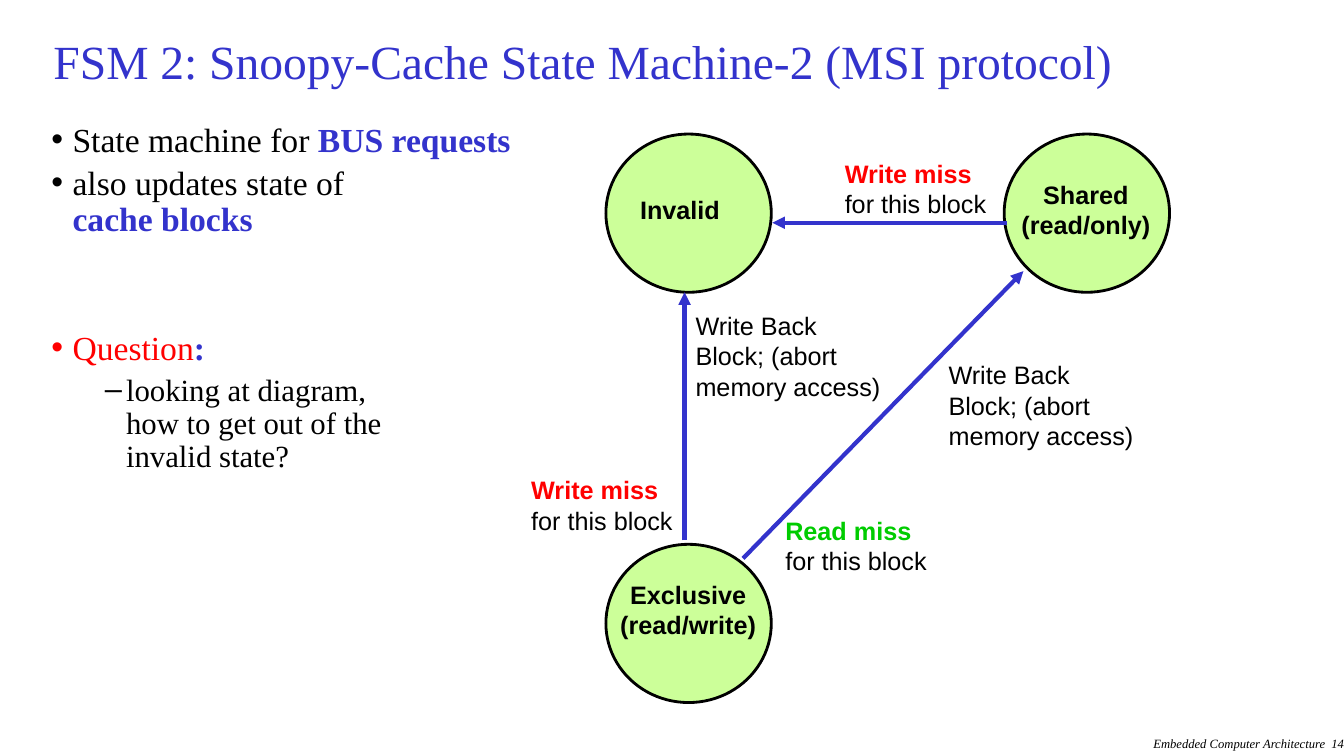
from dataclasses import dataclass

from lxml import etree
from pptx import Presentation
from pptx.dml.color import RGBColor
from pptx.enum import shapes, text
from pptx.oxml import ns
from pptx.util import Inches, Pt

BLACK, WHITE, BLUE = "000000", "FFFFFF", "3333CC"
RED, GREEN, LIME = "FF0000", "00CC00", "CCFF99"
SERIF, SANS = "Times New Roman", "Arial"
STATE_SIZE = (1.64, 1.57)
EVENT_SIZE = (1.62, 0.7)
WRITE_BACK = ("Write Back", "Block; (abort", "memory access)")


@dataclass(frozen=True)
class State:
    left: float
    top: float
    label_box: tuple[float, float, float, float]
    lines: tuple[str, ...]
    align: text.PP_ALIGN = text.PP_ALIGN.CENTER


@dataclass(frozen=True)
class Event:
    left: float
    top: float
    name: str
    color: str


@dataclass(frozen=True)
class Transition:
    start: tuple[float, float]
    end: tuple[float, float]


@dataclass(frozen=True)
class Action:
    box: tuple[float, float, float, float]
    wrap: bool


@dataclass(frozen=True)
class Bullet:
    runs: tuple[tuple[str, str, bool], ...]
    level: int = 0
    size: float = 24
    space_before: float = 5


STATES = (
    State(6.01, 1.33, (6.25, 1.88, 1.02, 0.4), ("Invalid",), text.PP_ALIGN.LEFT),
    State(9.96, 1.33, (10.01, 1.73, 1.52, 0.7), ("Shared", "(read/only)")),
    State(6.01, 5.4, (6.05, 5.7, 1.55, 0.7), ("Exclusive", "(read/write)")),
)
EVENTS = (
    Event(5.17, 4.66, "Write miss", RED),
    Event(7.69, 5.06, "Read miss", GREEN),
    Event(8.28, 1.52, "Write miss", RED),
)
TRANSITIONS = (
    Transition((9.99, 2.21), (7.66, 2.21)),
    Transition((6.79, 5.36), (6.79, 2.9)),
    Transition((7.37, 5.54), (10.15, 2.69)),
)
ACTIONS = (
    Action((6.8, 3.03, 2.05, 1.01), False),
    Action((9.31, 3.52, 2.1, 1), True),
)
BULLETS = (
    Bullet((("State machine for ", BLACK, False), ("BUS requests", BLUE, True))),
    Bullet((("also updates state of \n", BLACK, False), ("cache blocks", BLUE, True))),
    Bullet((("Question", RED, False), (":", BLUE, True)), space_before=66),
    Bullet((("looking at diagram,\nhow to get out of the \ninvalid state?", BLACK, False),),
           level=1, size=22),
)
BULLET_STYLES = (("•", 0.21), ("–", 0.74))


def rgb(color: str) -> RGBColor:
    return RGBColor.from_string(color)


def add_text(paragraph, content: str, *, size: float = 18, font: str = SANS,
             color: str = BLACK, bold: bool = False, italic: bool = False) -> None:
    """Append formatted text, turning each newline into a line break."""
    for index, line in enumerate(content.split("\n")):
        if index:
            paragraph.add_line_break()
        if line:
            run = paragraph.add_run()
            run.text = line
            run.font.size = Pt(size)
            run.font.name = font
            run.font.bold = bold
            run.font.italic = italic
            run.font.color.rgb = rgb(color)


def add_lines(slide, box: tuple[float, float, float, float], lines: tuple[str, ...], *,
              align: text.PP_ALIGN = text.PP_ALIGN.LEFT, wrap: bool = True, **style) -> None:
    """Add a text box with one paragraph per line."""
    frame = slide.shapes.add_textbox(*map(Inches, box)).text_frame
    frame.word_wrap = wrap
    for index, line in enumerate(lines):
        paragraph = frame.add_paragraph() if index else frame.paragraphs[0]
        paragraph.alignment = align
        add_text(paragraph, line, **style)


def place(shape, left: float, top: float, width: float, height: float) -> None:
    shape.left, shape.top = Inches(left), Inches(top)
    shape.width, shape.height = Inches(width), Inches(height)


def fill_title(title) -> None:
    place(title, 0.43, 0.25, 12.46, 0.8)
    frame = title.text_frame
    frame.auto_size = text.MSO_AUTO_SIZE.NONE
    frame.vertical_anchor = text.MSO_ANCHOR.MIDDLE
    paragraph = frame.paragraphs[0]
    paragraph.alignment = text.PP_ALIGN.LEFT
    paragraph.line_spacing = 0.8
    add_text(paragraph, "FSM 2: Snoopy-Cache State Machine-2 (MSI protocol)",
             size=34, font=SERIF, color=BLUE)


def fill_body(body) -> None:
    place(body, 0.41, 1.17, 12.52, 5.91)
    frame = body.text_frame
    frame.auto_size = text.MSO_AUTO_SIZE.NONE
    for index, bullet in enumerate(BULLETS):
        paragraph = frame.add_paragraph() if index else frame.paragraphs[0]
        paragraph.level = bullet.level
        paragraph.line_spacing = 0.9
        paragraph.space_before = Pt(bullet.space_before)
        character, margin = BULLET_STYLES[bullet.level]
        properties = paragraph._p.get_or_add_pPr()
        properties.set("marL", str(Inches(margin)))
        properties.set("indent", str(Inches(-0.21)))
        etree.SubElement(properties, ns.qn("a:buChar")).set("char", character)
        for content, color, bold in bullet.runs:
            add_text(paragraph, content, size=bullet.size, font=SERIF, color=color, bold=bold)


def add_state(slide, state: State) -> None:
    circle = slide.shapes.add_shape(shapes.MSO_SHAPE.OVAL, Inches(state.left),
                                    Inches(state.top), *map(Inches, STATE_SIZE))
    circle.shadow.inherit = False
    circle.fill.solid()
    circle.fill.fore_color.rgb = rgb(LIME)
    circle.line.color.rgb = rgb(BLACK)
    circle.line.width = Pt(2)
    add_lines(slide, state.label_box, state.lines, align=state.align, bold=True)


def add_event(slide, event: Event) -> None:
    label = slide.shapes.add_textbox(Inches(event.left), Inches(event.top),
                                     *map(Inches, EVENT_SIZE))
    label.fill.solid()
    label.fill.fore_color.rgb = rgb(WHITE)
    label.text_frame.word_wrap = False
    paragraph = label.text_frame.paragraphs[0]
    add_text(paragraph, f"{event.name} \n", color=event.color, bold=True)
    add_text(paragraph, "for this block")


def add_transition(slide, transition: Transition) -> None:
    arrow = slide.shapes.add_connector(shapes.MSO_CONNECTOR.STRAIGHT,
                                       *map(Inches, transition.start + transition.end))
    arrow.line.color.rgb = rgb(BLUE)
    arrow.line.width = Pt(3)
    etree.SubElement(arrow.line._get_or_add_ln(), ns.qn("a:tailEnd")).set("type", "triangle")
    etree.SubElement(arrow._element.spPr, ns.qn("a:effectLst"))


def main() -> None:
    presentation = Presentation()
    presentation.slide_width, presentation.slide_height = Inches(13.33), Inches(7.5)
    slide = presentation.slides.add_slide(presentation.slide_layouts[1])
    add_lines(slide, (9.5, 7.25, 3.83, 0.25), ("Embedded Computer Architecture  14",),
              align=text.PP_ALIGN.RIGHT, size=9, font=SERIF, italic=True)
    footer = slide.shapes[-1].text_frame
    footer.margin_left = footer.margin_right = 0
    fill_title(slide.shapes.title)
    fill_body(slide.placeholders[1])
    for state in STATES:
        add_state(slide, state)
    for event in EVENTS:
        add_event(slide, event)
    for transition in TRANSITIONS:
        add_transition(slide, transition)
    for action in ACTIONS:
        add_lines(slide, action.box, WRITE_BACK, wrap=action.wrap)
    presentation.save("out.pptx")


if __name__ == "__main__":
    main()
